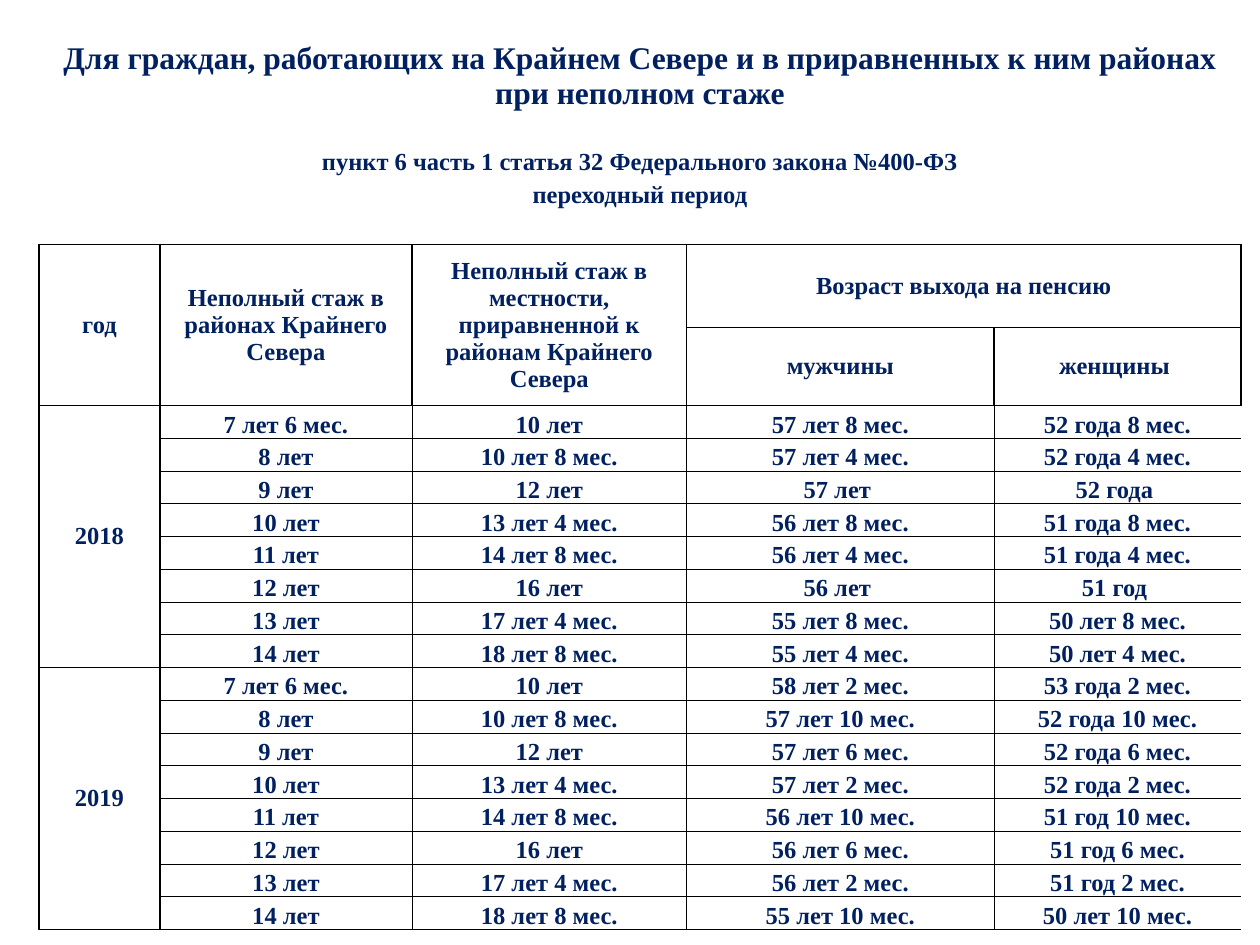
from lxml.etree import SubElement
from pptx import Presentation
from pptx.dml.color import RGBColor
from pptx.enum.text import MSO_ANCHOR, PP_ALIGN
from pptx.oxml.ns import qn
from pptx.util import Inches, Pt

NAVY = RGBColor(0x00, 0x20, 0x60)
WHITE = RGBColor(0xFF, 0xFF, 0xFF)
BLACK = RGBColor(0x00, 0x00, 0x00)
NO_STYLE = "{2D5ABB26-0587-4C30-8999-92F81FD0307C}"
FONT = {"name": "Times New Roman", "size": Pt(14), "bold": True}
THIN, THICK = 0.5, 1

# Grid: title block, two header rows, then two years of eight rows
COLUMN_WIDTHS = [0.96, 2, 2.18, 2.44, 1.96]
YEAR_ROWS = 8
LINE_HEIGHT = 0.26
HEADER, BODY = 5, 7
ROW_HEIGHTS = [0.59] + [LINE_HEIGHT] * 4 + [0.66, 0.62] + [LINE_HEIGHT] * 2 * YEAR_ROWS

HEADINGS = {
    (0, 0): "Для граждан, работающих на Крайнем Севере и в приравненных к ним районах при неполном стаже",
    (2, 0): "пункт 6 часть 1 статья 32 Федерального закона №400-ФЗ",
    (3, 0): "переходный период",
    (HEADER, 0): "год",
    (HEADER, 1): "Неполный стаж в районах Крайнего Севера",
    (HEADER, 2): "Неполный стаж в местности, приравненной к районам Крайнего Севера",
    (HEADER, 3): "Возраст выхода на пенсию",
    (HEADER + 1, 3): "мужчины",
    (HEADER + 1, 4): "женщины ",
}
SERVICE = [
    ("7 лет 6 мес.", "10 лет"), ("8 лет", "10 лет 8 мес."),
    ("9 лет", "12 лет"), ("10 лет", "13 лет 4 мес."),
    ("11 лет", "14 лет 8 мес."), ("12 лет", "16 лет"),
    ("13 лет", "17 лет 4 мес."), ("14 лет", "18 лет 8 мес."),
]
AGES = {
    "2018": [
        ("57 лет 8 мес.", "52 года 8 мес."), ("57 лет 4 мес.", "52 года 4 мес."),
        ("57 лет ", "52 года "), ("56 лет 8 мес.", "51 года 8 мес."),
        ("56 лет 4 мес.", "51 года 4 мес."), ("56 лет ", "51 год "),
        ("55 лет 8 мес.", "50 лет 8 мес."), ("55 лет 4 мес.", "50 лет 4 мес."),
    ],
    "2019": [
        ("58 лет 2 мес.", "53 года 2 мес."), ("57 лет 10 мес.", "52 года 10 мес."),
        ("57 лет 6 мес.", "52 года 6 мес."), ("57 лет 2 мес.", "52 года 2 мес."),
        ("56 лет 10 мес.", "51 год 10 мес."), ("56 лет 6 мес.", "51 год 6 мес."),
        ("56 лет 2 мес.", "51 год 2 мес."), ("55 лет 10 мес.", "50 лет 10 мес."),
    ],
}


def border_widths(row, column):
    """Return the left, right, top and bottom line widths of a cell."""
    if row < HEADER:
        return 0, 0, 0, THICK if row == HEADER - 1 else 0
    if row < BODY:
        return THICK, THICK, THICK, THICK
    step = (row - BODY) % YEAR_ROWS
    inner = THIN if column else 0
    left = THICK if column < 2 else THIN
    right = (THICK, THIN, THIN, THIN, 0)[column]
    top = THICK if step == 0 else inner
    bottom = THICK if step == YEAR_ROWS - 1 else inner
    return left, right, top, bottom


def add_borders(cell, widths):
    properties = cell._tc.get_or_add_tcPr()
    for side, width in zip("LRTB", widths):
        line = SubElement(properties, qn(f"a:ln{side}"), w=str(Pt(width)))
        if width:
            fill = SubElement(line, qn("a:solidFill"))
            SubElement(fill, qn("a:srgbClr"), val=str(BLACK))
        else:
            SubElement(line, qn("a:noFill"))


presentation = Presentation()
presentation.slide_width, presentation.slide_height = Inches(10), Inches(7.5)
slide = presentation.slides.add_slide(presentation.slide_layouts[6])

# Table frame
shape = slide.shapes.add_table(
    len(ROW_HEIGHTS), len(COLUMN_WIDTHS), Inches(0.31), Inches(0.31),
    Inches(sum(COLUMN_WIDTHS)), Inches(sum(ROW_HEIGHTS)))
table = shape.table
table.first_row = table.horz_banding = False
table._tbl.tblPr.find(qn("a:tableStyleId")).text = NO_STYLE
for column, width in zip(table.columns, COLUMN_WIDTHS):
    column.width = Inches(width)
for row, height in zip(table.rows, ROW_HEIGHTS):
    row.height = Inches(height)

# Texts by row and column
texts = dict(HEADINGS)
for year_index, (year, ages) in enumerate(AGES.items()):
    first_row = BODY + year_index * YEAR_ROWS
    texts[first_row, 0] = year
    for step, (service, age) in enumerate(zip(SERVICE, ages)):
        for column_index, text in enumerate(service + age, start=1):
            texts[first_row + step, column_index] = text

# Cell formats
for row_index in range(len(ROW_HEIGHTS)):
    for column_index in range(len(COLUMN_WIDTHS)):
        cell = table.cell(row_index, column_index)
        add_borders(cell, border_widths(row_index, column_index))
        cell.fill.solid()
        cell.fill.fore_color.rgb = WHITE
        cell.margin_left = cell.margin_right = cell.margin_top = cell.margin_bottom = 0
        is_value = row_index >= BODY and column_index > 0
        cell.vertical_anchor = MSO_ANCHOR.BOTTOM if is_value else MSO_ANCHOR.MIDDLE
        paragraph = cell.text_frame.paragraphs[0]
        paragraph.alignment = PP_ALIGN.CENTER
        if (row_index, column_index) not in texts:
            SubElement(paragraph._p, qn("a:endParaRPr"), sz="1400")
            continue
        run = paragraph.add_run()
        run.text = texts[row_index, column_index]
        for attribute, value in FONT.items():
            setattr(run.font, attribute, value)
        run.font.color.rgb = NAVY
        if row_index == 0:
            run.font.size = Pt(18)

# Merged cells: full-width lines, header cells, years
merges = [((row, 0), (row, 4)) for row in (0, 2, 3)]
merges += [((HEADER, column), (HEADER + 1, column)) for column in range(3)]
merges += [((HEADER, 3), (HEADER, 4))]
merges += [((row, 0), (row + YEAR_ROWS - 1, 0)) for row in (BODY, BODY + YEAR_ROWS)]
for start, end in merges:
    table.cell(*start).merge(table.cell(*end))

# The merged year cells close with a thick line
for row_index in (BODY, BODY + YEAR_ROWS):
    properties = table.cell(row_index, 0)._tc.tcPr
    bottom_line = properties.find(qn("a:lnB"))
    bottom_line.set("w", str(Pt(THICK)))
    bottom_line.remove(bottom_line[0])
    fill = SubElement(bottom_line, qn("a:solidFill"))
    SubElement(fill, qn("a:srgbClr"), val=str(BLACK))

presentation.save("out.pptx")
